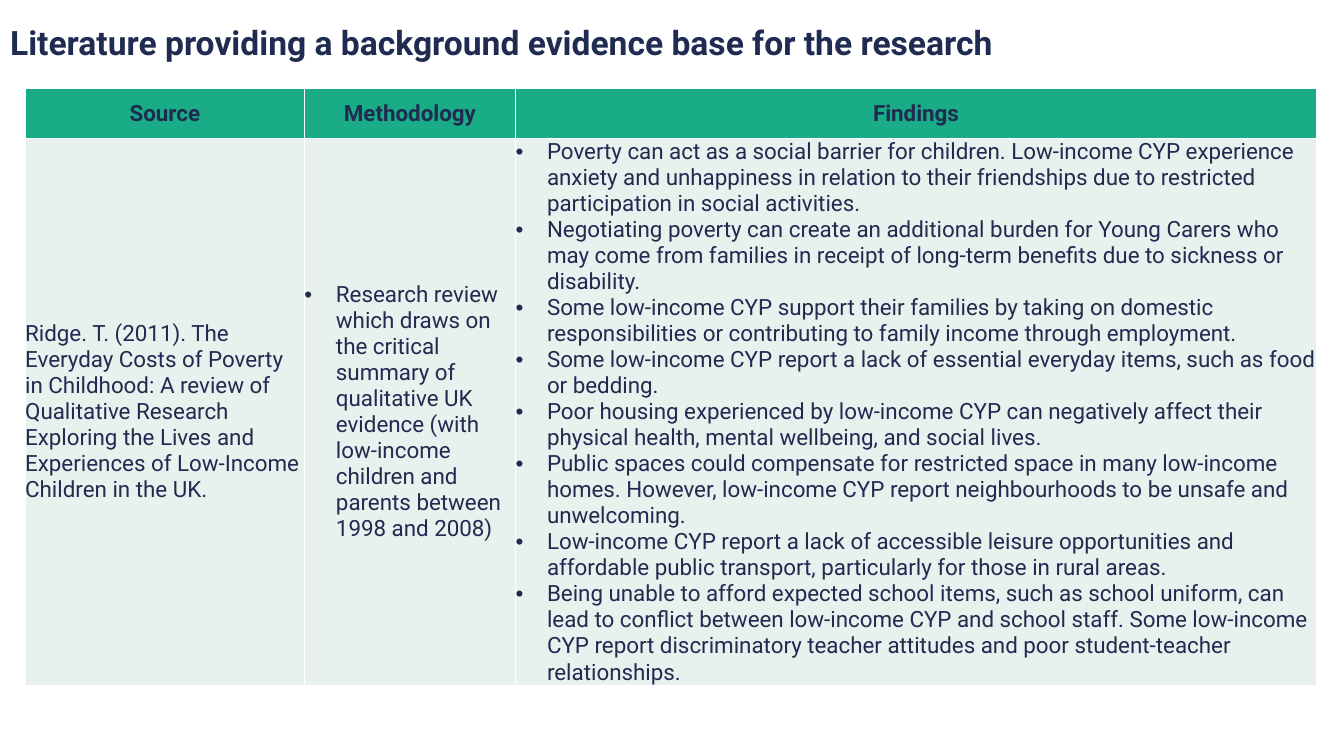
from dataclasses import dataclass

from lxml.etree import SubElement
from pptx import Presentation
from pptx.dml.color import RGBColor
from pptx.enum.text import MSO_ANCHOR, MSO_AUTO_SIZE, PP_ALIGN
from pptx.oxml import parse_xml
from pptx.oxml.ns import nsdecls, qn
from pptx.util import Pt


@dataclass(frozen=True)
class Theme:
    font: str = "Roboto"
    ink: str = "202B51"
    body: str = "202B52"
    head: str = "19AC86"
    cell: str = "E8F1ED"
    rule: str = "FFFFFF"
    large: int = 24
    small: int = 16


THEME = Theme()
SCALE = 9525
INDENT = 30
COLS = [266, 201, 763]
ROWS = [48, 498]
TITLE = "Literature providing a background evidence base for the research"
HEADS = ["Source", "Methodology", "Findings"]
SOURCE = ["Ridge. T. (2011). The Everyday Costs of Poverty in Childhood: A review of Qualitative Research Exploring the Lives and Experiences of Low-Income Children in the UK."]
METHOD = ["Research review which draws on the critical summary of qualitative UK evidence (with low-income children and parents between 1998 and 2008)"]
FINDINGS = [
    "Poverty can act as a social barrier for children. Low-income CYP experience anxiety and unhappiness in relation to their friendships due to restricted participation in social activities.",
    "Negotiating poverty can create an additional burden for Young Carers who may come from families in receipt of long-term benefits due to sickness or disability.",
    "Some low-income CYP support their families by taking on domestic responsibilities or contributing to family income through employment.",
    "Some low-income CYP report a lack of essential everyday items, such as food or bedding.",
    "Poor housing experienced by low-income CYP can negatively affect their physical health, mental wellbeing, and social lives.",
    "Public spaces could compensate for restricted space in many low-income homes. However, low-income CYP report neighbourhoods to be unsafe and unwelcoming.",
    "Low-income CYP report a lack of accessible leisure opportunities and affordable public transport, particularly for those in rural areas.",
    "Being unable to afford expected school items, such as school uniform, can lead to conflict between low-income CYP and school staff. Some low-income CYP report discriminatory teacher attitudes and poor student-teacher relationships.",
]


def px(count):
    return count * SCALE


def style(para, size, color, bold):
    for run in para.runs:
        font = run.font
        font.name = THEME.font
        font.size = Pt(size)
        font.bold = bold
        font.color.rgb = RGBColor.from_string(color)


def bullet(para):
    props = para._p.get_or_add_pPr()
    props.set("marL", str(px(INDENT)))
    props.set("indent", str(-px(INDENT)))
    SubElement(props, qn("a:buFont"), typeface="Arial")
    SubElement(props, qn("a:buChar"), char="•")


def border(cell):
    props = cell._tc.get_or_add_tcPr()
    for place, side in enumerate("LRTB"):
        line = parse_xml(
            f'<a:ln{side} {nsdecls("a")} w="{Pt(1)}"><a:solidFill>'
            f'<a:srgbClr val="{THEME.rule}"/></a:solidFill></a:ln{side}>'
        )
        props.insert(place, line)


def fill_cell(cell, lines, head=False, listed=False):
    cell.margin_left = cell.margin_right = 0
    cell.margin_top = cell.margin_bottom = 0
    cell.vertical_anchor = MSO_ANCHOR.MIDDLE
    cell.fill.solid()
    cell.fill.fore_color.rgb = RGBColor.from_string(THEME.head if head else THEME.cell)
    border(cell)
    cell.text_frame.text = "\n".join(lines)
    for para in cell.text_frame.paragraphs:
        para.alignment = PP_ALIGN.CENTER if head else PP_ALIGN.LEFT
        if listed:
            bullet(para)
        style(para, THEME.small, THEME.ink if head else THEME.body, head)


def add_title(slide):
    title = slide.shapes.title
    title.left, title.top, title.width, title.height = 0, px(16), px(1280), px(175)
    frame = title.text_frame
    frame.text = TITLE
    frame.word_wrap = True
    frame.auto_size = MSO_AUTO_SIZE.NONE
    frame.vertical_anchor = MSO_ANCHOR.TOP
    para = frame.paragraphs[0]
    para.alignment = PP_ALIGN.LEFT
    style(para, THEME.large, THEME.ink, True)


def add_grid(slide):
    table = slide.shapes.add_table(
        len(ROWS), len(COLS), px(24), px(84), px(sum(COLS)), px(sum(ROWS))
    ).table
    table.horz_banding = False
    for col, width in zip(table.columns, COLS):
        col.width = px(width)
    for row, height in zip(table.rows, ROWS):
        row.height = px(height)
    for col, (head, lines) in enumerate(zip(HEADS, [SOURCE, METHOD, FINDINGS])):
        fill_cell(table.cell(0, col), [head], head=True)
        fill_cell(table.cell(1, col), lines, listed=col > 0)


def main():
    deck = Presentation()
    deck.slide_width, deck.slide_height = px(1280), px(720)
    slide = deck.slides.add_slide(deck.slide_layouts[5])
    add_title(slide)
    add_grid(slide)
    deck.save("out.pptx")


if __name__ == "__main__":
    main()
